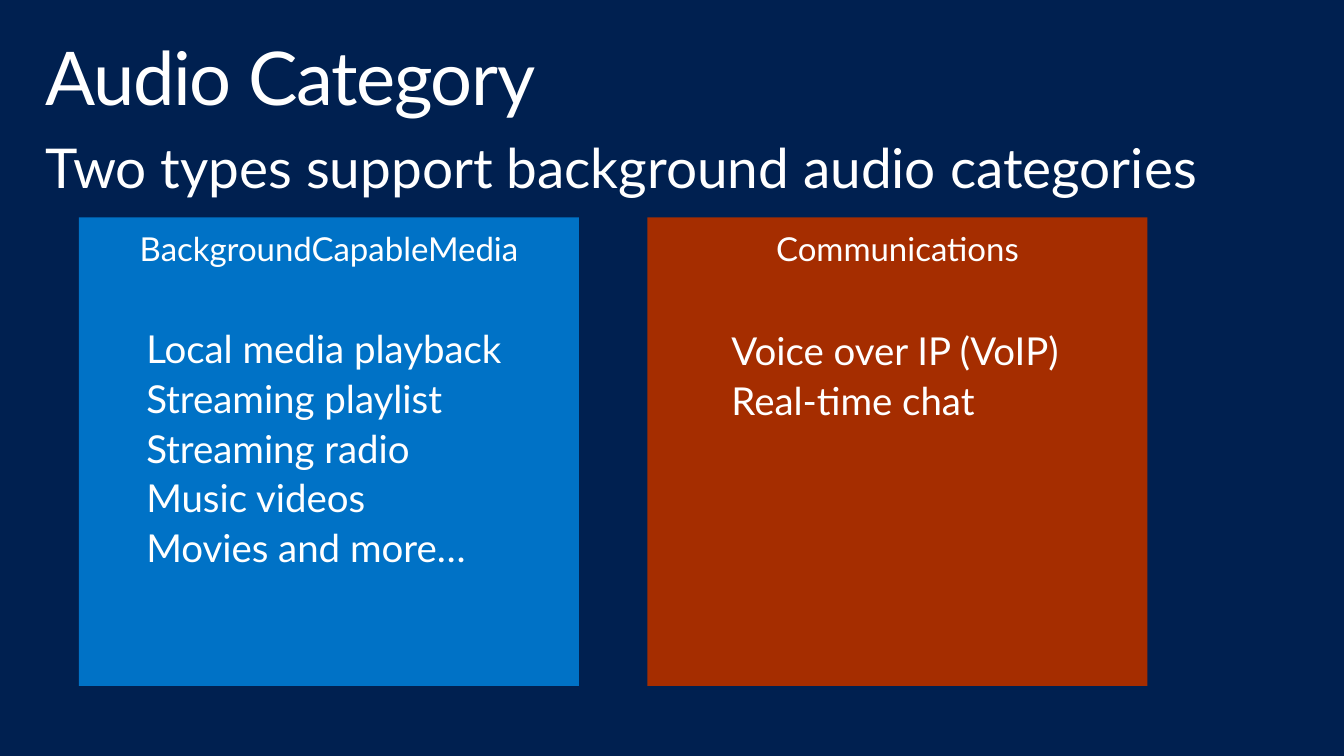
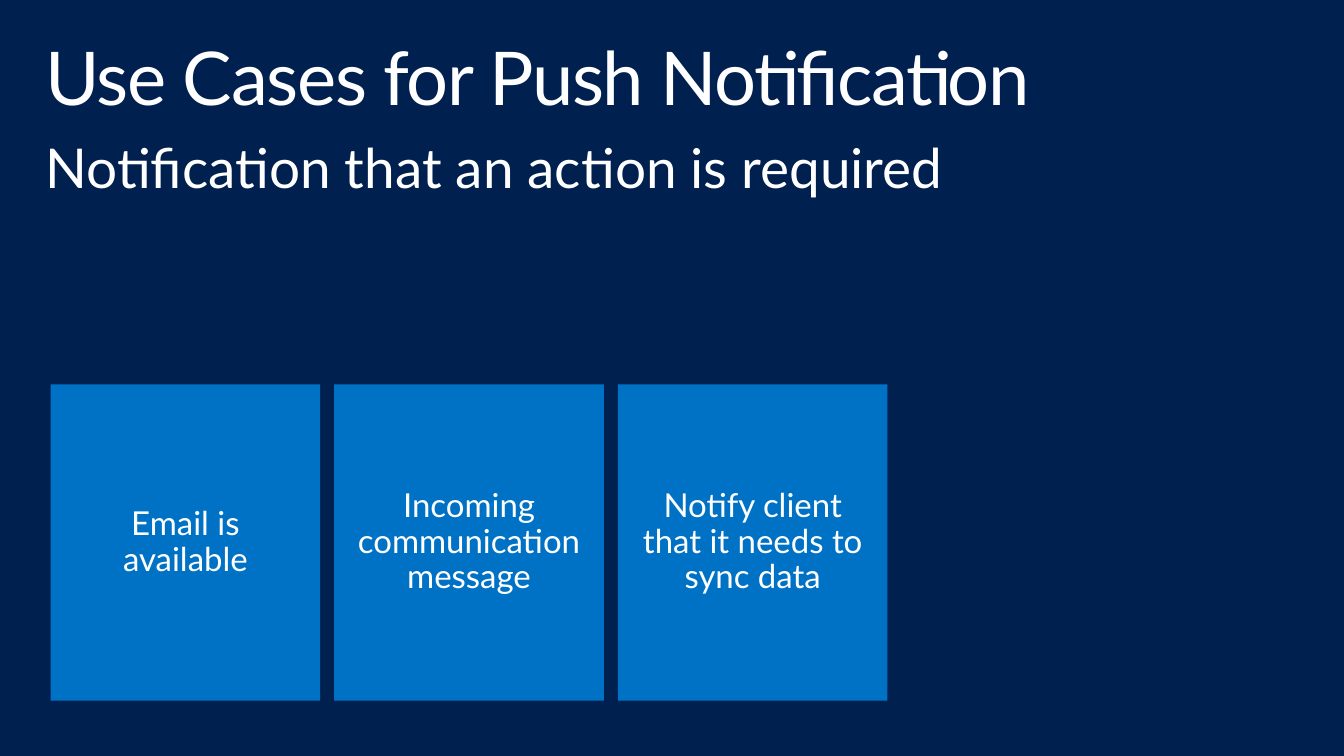
from dataclasses import dataclass

import pptx
import pptx.dml.color
import pptx.enum.shapes
import pptx.enum.text
import pptx.util

Cm = pptx.util.Cm
Pt = pptx.util.Pt
ANCHOR = pptx.enum.text.MSO_ANCHOR
ALIGN = pptx.enum.text.PP_ALIGN


@dataclass(frozen=True)
class Theme:
    font: str = "Lato"
    background: str = "002050"
    text: str = "FFFFFF"
    blue: str = "0072C6"
    rust: str = "A52D00"
    title_size: int = 54
    subtitle_size: int = 40
    list_size: int = 28
    label_size: int = 24
    line_spacing: float = 0.9
    title_tracking: int = -100
    heading_inset: tuple = (0.41, 0.25)
    block_inset: tuple = (0.51, 0.41)


class Deck:
    def __init__(self, theme):
        self.theme = theme
        self.prs = pptx.Presentation()
        self.prs.slide_width = Cm(34.54)
        self.prs.slide_height = Cm(19.43)
        self.s = None

    def color(self, value):
        return pptx.dml.color.RGBColor.from_string(value)

    def set_text(self, sp, lines, size, inset, align=ALIGN.LEFT,
                 anchor=ANCHOR.TOP, space_after=0, tracking=None):
        tf = sp.text_frame
        tf.text = "\n".join(lines)
        tf.word_wrap = True
        tf.vertical_anchor = anchor
        tf.margin_left = tf.margin_right = Cm(inset[0])
        tf.margin_top = tf.margin_bottom = Cm(inset[1])
        for p in tf.paragraphs:
            p.alignment = align
            p.line_spacing = self.theme.line_spacing
            p.space_after = Pt(space_after)
            for r in p.runs:
                r.font.name = self.theme.font
                r.font.size = Pt(size)
                r.font.color.rgb = self.color(self.theme.text)
                if tracking is not None:
                    r._r.get_or_add_rPr().set("spc", str(tracking))

    def heading(self, text, top, height, size, tracking=None):
        sp = self.s.shapes.add_textbox(Cm(0.76), Cm(top), Cm(33.02), Cm(height))
        self.set_text(sp, [text], size, self.theme.heading_inset,
                      tracking=tracking)

    def slide(self, title, subtitle):
        t = self.theme
        self.s = self.prs.slides.add_slide(self.prs.slide_layouts[6])
        fill = self.s.background.fill
        fill.solid()
        fill.fore_color.rgb = self.color(t.background)
        self.heading(title, 0.81, 2.54, t.title_size, t.title_tracking)
        self.heading(subtitle, 3.38, 2.06, t.subtitle_size)

    def block(self, text, left, top, width, height, fill, anchor=ANCHOR.TOP):
        sp = self.s.shapes.add_shape(
            pptx.enum.shapes.MSO_SHAPE.RECTANGLE,
            Cm(left), Cm(top), Cm(width), Cm(height))
        sp.shadow.inherit = False
        sp.fill.solid()
        sp.fill.fore_color.rgb = self.color(fill)
        sp.line.fill.background()
        self.set_text(sp, [text], self.theme.label_size,
                      self.theme.block_inset, ALIGN.CENTER, anchor)

    def item_list(self, items, left, top, width, height):
        sp = self.s.shapes.add_textbox(Cm(left), Cm(top), Cm(width), Cm(height))
        self.set_text(sp, items, self.theme.list_size, self.theme.block_inset,
                      space_after=6)


def audio_category(deck):
    deck.slide("Audio Category", "Two types support background audio categories")
    panels = [("BackgroundCapableMedia", deck.theme.blue),
              ("Communications", deck.theme.rust)]
    for i, (name, fill) in enumerate(panels):
        deck.block(name, 2.03 + i * 14.61, 5.59, 12.85, 12.04, fill)
    deck.item_list(["Local media playback", "Streaming playlist",
                    "Streaming radio", "Music videos", "Movies and more…"],
                   3.25, 8.08, 10.39, 7.06)
    deck.item_list(["Voice over IP (VoIP)", "Real-time chat"],
                   18.29, 8.13, 9.53, 3.2)


def push_notification(deck):
    deck.slide("Use Cases for Push Notification",
               "Notification that an action is required")
    cases = ["Email is available", "Incoming communication message",
             "Notify client that it needs to sync data"]
    for i, case in enumerate(cases):
        deck.block(case, 1.3 + i * 7.29, 9.88, 6.93, 8.13,
                   deck.theme.blue, ANCHOR.MIDDLE)


def main():
    deck = Deck(Theme())
    audio_category(deck)
    push_notification(deck)
    deck.prs.save("out.pptx")


if __name__ == "__main__":
    main()
